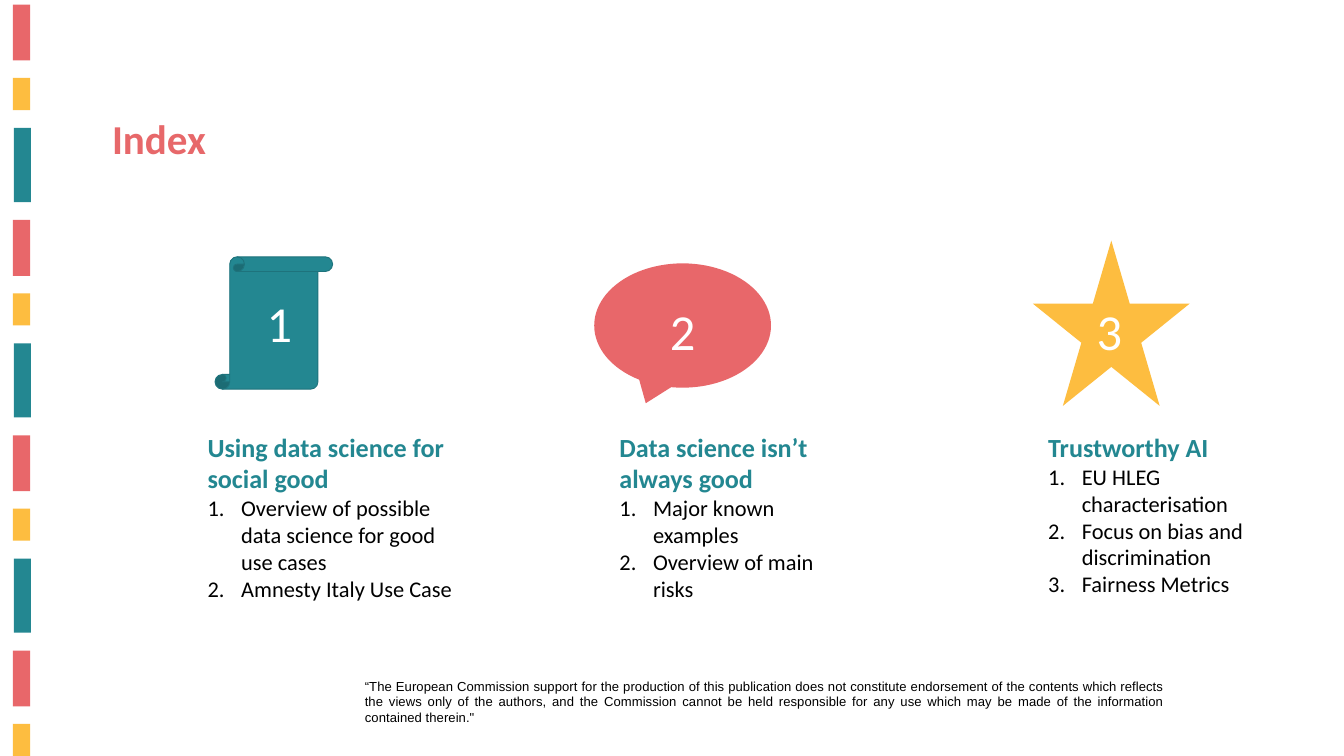
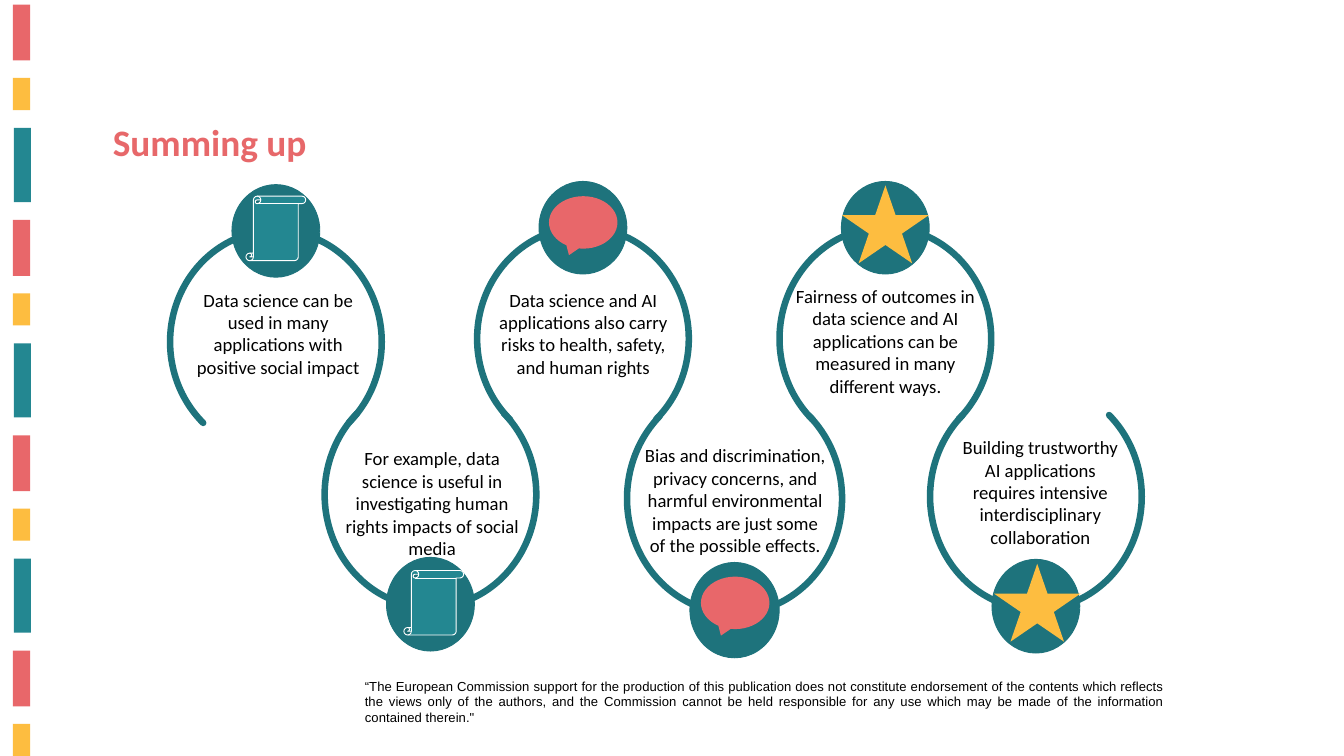
import pptx
import pptx.dml.color
import pptx.enum.shapes
import pptx.enum.text
import pptx.oxml.ns
import pptx.util
from lxml import etree

Pt = pptx.util.Pt
SHAPES = pptx.enum.shapes.MSO_SHAPE
ALIGN = pptx.enum.text.PP_ALIGN

# Shared colours and furniture
CORAL, YELLOW, TEAL, DARK_TEAL = "E8676A", "FDBD40", "238791", "1E737C"
TITLE_COLOR, BLACK, WHITE = "E7686A", "000000", "FFFFFF"
STRIPES = [  # left, top, width, height, colour
    (13.8, 5, 18.6, 59.8, CORAL),
    (13.8, 83.6, 18.6, 34.4, YELLOW),
    (15, 137.1, 18, 79.4, TEAL),
]
STRIPE_COUNT, STRIPE_PERIOD = 11, 230.7
DISCLAIMER = (
    "“The European Commission support for the production of this publication does not "
    "constitute endorsement of the contents which reflects the views only of the authors, "
    "and the Commission cannot be held responsible for any use which may be made of the "
    "information contained therein.\"")
DISCLAIMER_BOX = (383.8, 722.9, 871, 58.3)

# Icons: preset and fill
ICONS = {
    "scroll": (SHAPES.VERTICAL_SCROLL, TEAL),
    "callout": (SHAPES.OVAL_CALLOUT, CORAL),
    "star": (SHAPES.STAR_5_POINT, YELLOW),
}

# Index slide
INDEX_COLUMNS = [
    {"icon": "scroll", "icon_box": (230.4, 275.2, 126, 141.8), "line": DARK_TEAL,
     "number": "1", "number_box": (278.6, 309.6, 113.8, 72.7),
     "text_box": (215.3, 458.8, 288.7, 191.5),
     "heading": "Using data science for social good",
     "items": ["Overview of possible data science for good use cases",
               "Amnesty Italy Use Case"]},
    {"icon": "callout", "icon_box": (636.7, 282.2, 189.4, 133.2), "line": None,
     "number": "2", "number_box": (710.6, 317.5, 77.8, 72.7),
     "text_box": (656.6, 458.8, 243.4, 191.5),
     "heading": "Data science isn’t always good",
     "items": ["Major known examples", "Overview of main risks"]},
    {"icon": "star", "icon_box": (1106.8, 257.8, 167.8, 177.1), "line": None,
     "number": "3", "number_box": (1167.8, 317.5, 108, 72.7),
     "text_box": (1116, 458.8, 228.2, 186.5),
     "heading": "Trustworthy AI",
     "items": ["EU HLEG characterisation", "Focus on bias and discrimination",
               "Fairness Metrics"]},
]

# Summary slide: the path runs left to right, alternating upper and lower arcs
ICON_SIZES = {"scroll": (64.1, 69.1), "callout": (73.4, 56.2), "star": (92.9, 83.5)}
SUMMARY_STOPS = [  # arc box, icon, icon position, text box, text
    ((182.2, 246.8, 226.8, 239), "scroll", (263.5, 210.2), (193.7, 305.5, 208.8, 104.4),
     "Data science can be used in many applications with positive social impact"),
    ((347.8, 409, 226.8, 241.9), "scroll", (432.7, 611.3), (352.1, 475.7, 221.8, 128.2),
     "For example, data science is useful in investigating human rights impacts "
     "of social media"),
    ((511.2, 243.4, 226.8, 239), "callout", (588.2, 210.2), (514.1, 305.5, 221.8, 104.4),
     "Data science and AI applications also carry risks to health, safety, "
     "and human rights"),
    ((671.8, 411.1, 230.4, 246.2), "callout", (751, 617.8), (683.3, 472.3, 208.8, 152.6),
     "Bias and discrimination, privacy concerns, and harmful environmental impacts "
     "are just some of the possible effects."),
    ((835.2, 243.4, 226.8, 239), "star", (902.2, 198.7), (837.4, 301.5, 222.5, 128.2),
     "Fairness of outcomes in data science and AI applications can be measured "
     "in many different ways."),
    ((996.5, 411.1, 226.8, 241.9), "star", (1064.9, 604.1), (1015.7, 463.7, 198, 128.2),
     "Building trustworthy AI applications requires intensive interdisciplinary "
     "collaboration"),
]
ARC_ANGLES = (79.141, 28.684)
CIRCLE_SCALE = 0.415
CIRCLE_RISE, CIRCLE_DROP = -0.205, 0.778  # circle top as a share of the arc height


def rgb(hex_color):
    return pptx.dml.color.RGBColor.from_string(hex_color)


def points(box):
    return [Pt(length) for length in box]


def add_shape(slide, preset, box, fill=None, line=None, line_width=1):
    shape = slide.shapes.add_shape(preset, *points(box))
    shape.shadow.inherit = False
    if fill:
        shape.fill.solid()
        shape.fill.fore_color.rgb = rgb(fill)
    else:
        shape.fill.background()
    if line:
        shape.line.color.rgb = rgb(line)
        shape.line.width = Pt(line_width)
    else:
        shape.line.fill.background()
    return shape


def add_icon(slide, icon, box, line=None):
    preset, fill = ICONS[icon]
    return add_shape(slide, preset, box, fill, line)


def format_paragraph(paragraph, size, color, bold=False, font="Calibri"):
    for run in paragraph.runs:
        run.font.name = font
        run.font.size = Pt(size)
        run.font.bold = bold
        run.font.color.rgb = rgb(color)


def add_text(slide, box, text, size, color, bold=False, font="Calibri", align=ALIGN.LEFT):
    text_frame = slide.shapes.add_textbox(*points(box)).text_frame
    text_frame.word_wrap = True
    text_frame.auto_size = pptx.enum.text.MSO_AUTO_SIZE.SHAPE_TO_FIT_TEXT
    text_frame.text = text
    paragraph = text_frame.paragraphs[0]
    paragraph.alignment = align
    format_paragraph(paragraph, size, color, bold, font)
    return text_frame


def add_numbered_item(text_frame, text):
    paragraph = text_frame.add_paragraph()
    paragraph.text = text
    properties = paragraph._p.get_or_add_pPr()
    properties.set("marL", str(Pt(36)))
    properties.set("indent", str(-Pt(36)))
    numbering = etree.SubElement(properties, pptx.oxml.ns.qn("a:buAutoNum"))
    numbering.set("type", "arabicPeriod")
    format_paragraph(paragraph, 24, BLACK)


def add_base_slide(presentation, title, title_box, title_size):
    slide = presentation.slides.add_slide(presentation.slide_layouts[6])
    # Side band
    for index in range(STRIPE_COUNT):
        cycle, kind = divmod(index, len(STRIPES))
        left, top, width, height, color = STRIPES[kind]
        add_shape(slide, SHAPES.RECTANGLE,
                  (left, top + cycle * STRIPE_PERIOD, width, height), color)
    # Footer and title
    footer = add_text(slide, DISCLAIMER_BOX, DISCLAIMER, 14, BLACK, font="Arial",
                      align=ALIGN.JUSTIFY)
    footer.paragraphs[0].runs[0]._r.get_or_add_rPr().set("spc", "5")
    add_text(slide, title_box, title, title_size, TITLE_COLOR, bold=True)
    return slide


def build_index(presentation):
    slide = add_base_slide(presentation, "Index", (113, 118.1, 487.4, 60.5), 44)
    for column in INDEX_COLUMNS:
        add_icon(slide, column["icon"], column["icon_box"], column["line"])
        add_text(slide, column["number_box"], column["number"], 54, WHITE)
        text_frame = add_text(slide, column["text_box"], column["heading"], 28, TEAL, True)
        for item in column["items"]:
            add_numbered_item(text_frame, item)


def add_stop(slide, arc_box, is_lower):
    left, top, width, height = arc_box
    arc = add_shape(slide, SHAPES.ARC, arc_box, line=DARK_TEAL, line_width=7)
    arc.adjustments[0], arc.adjustments[1] = ARC_ANGLES
    arc.rotation = 180 if is_lower else 0
    arc.line._get_or_add_ln().set("cap", "rnd")
    circle_shift = CIRCLE_DROP if is_lower else CIRCLE_RISE
    circle_box = (left + width * (1 - CIRCLE_SCALE) / 2, top + height * circle_shift,
                  width * CIRCLE_SCALE, height * CIRCLE_SCALE)
    add_shape(slide, SHAPES.OVAL, circle_box, DARK_TEAL, DARK_TEAL)


def build_summary(presentation):
    slide = add_base_slide(presentation, "Summing up", (113.8, 123.8, 473.8, 55.4), 40)
    # Winding path
    for index, (arc_box, *_) in enumerate(SUMMARY_STOPS):
        add_stop(slide, arc_box, is_lower=index % 2 == 1)
    # Messages and icons
    for _, icon, position, text_box, text in SUMMARY_STOPS:
        add_text(slide, text_box, text, 20, BLACK, align=ALIGN.CENTER)
        add_icon(slide, icon, position + ICON_SIZES[icon],
                 WHITE if icon == "scroll" else None)


def main():
    presentation = pptx.Presentation()
    presentation.slide_width, presentation.slide_height = Pt(1440), Pt(810)
    build_index(presentation)
    build_summary(presentation)
    presentation.save("out.pptx")


if __name__ == "__main__":
    main()
